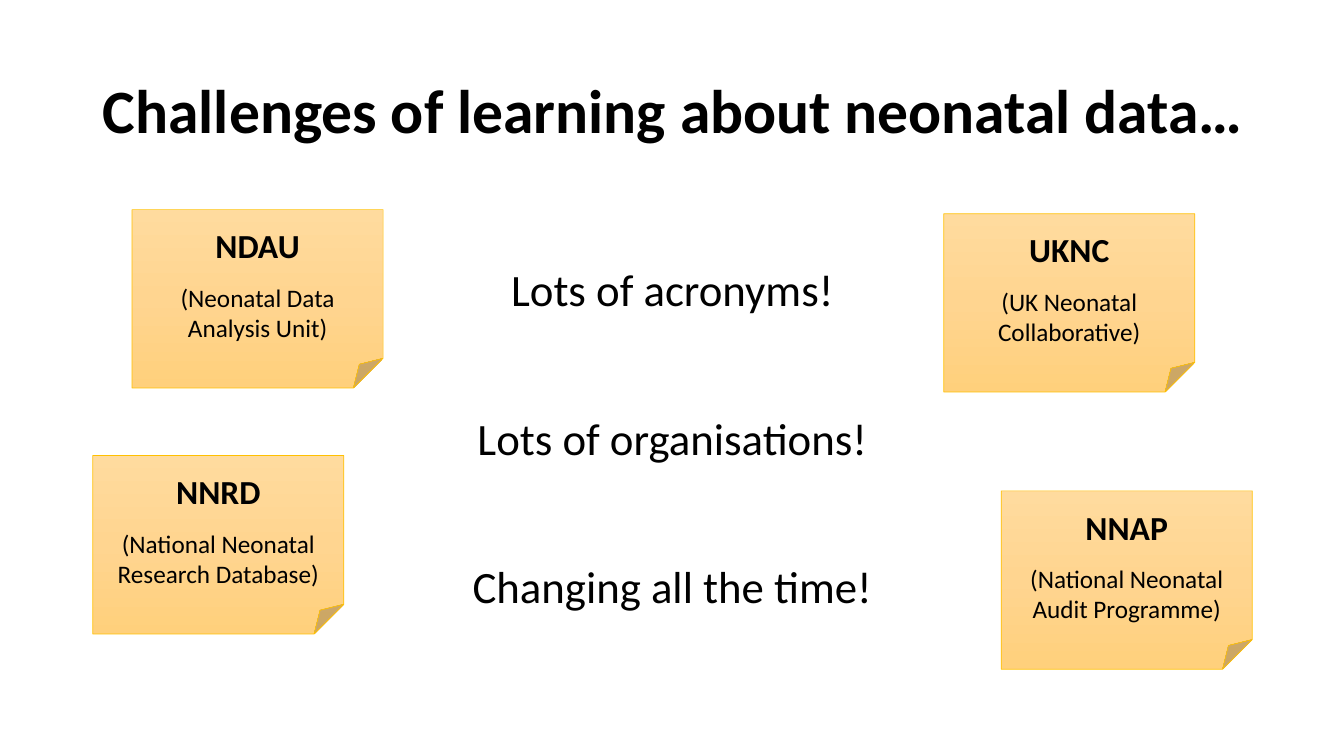
from copy import deepcopy
from dataclasses import dataclass
from typing import Optional

from pptx import Presentation
from pptx.dml.color import RGBColor
from pptx.enum.shapes import MSO_SHAPE
from pptx.enum.text import MSO_ANCHOR, MSO_AUTO_SIZE, PP_ALIGN
from pptx.oxml.ns import qn
from pptx.oxml.xmlchemy import OxmlElement
from pptx.util import Emu, Pt

FOLDED_CORNER = MSO_SHAPE.FOLDED_CORNER
LEFT, CENTER = PP_ALIGN.LEFT, PP_ALIGN.CENTER
TOP, MIDDLE = MSO_ANCHOR.TOP, MSO_ANCHOR.MIDDLE
NO_AUTOFIT = MSO_AUTO_SIZE.NONE

EMU_PER_PX = 9144  # 100 px to the inch
FONT = "Calibri"
BLACK = "000000"
NOTE_LINE = "FFC000"
NOTE_GRADIENT = ((0, "FFDB9E"), (0.5, "FFD590"), (1, "FFD07C"))
NOTE_WIDTH, NOTE_HEIGHT = 249, 177


@dataclass(frozen=True)
class StickyNote:
    left: int
    top: int
    acronym: str
    meaning: str


TITLE = "Challenges of learning about neonatal data…"
CHALLENGES = ("Lots of acronyms!", "Lots of organisations!", "Changing all the time!")
NOTES = (
    StickyNote(131, 208, "NDAU", "(Neonatal Data Analysis Unit)"),
    StickyNote(92, 452, "NNRD", "(National Neonatal Research Database)"),
    StickyNote(936, 212, "UKNC", "(UK Neonatal Collaborative)"),
    StickyNote(993, 487, "NNAP", "(National Neonatal Audit Programme)"),
)


def px(length: int) -> Emu:
    return Emu(length * EMU_PER_PX)


def color(value: str) -> RGBColor:
    return RGBColor.from_string(value)


def write(paragraph, text: str, *, size: int, bold: bool = False, align=CENTER,
          line_spacing: Optional[float] = None, before: int = 0, after: int = 0) -> None:
    """Fill a paragraph with one formatted run."""
    paragraph.alignment = align
    paragraph.line_spacing = line_spacing
    paragraph.space_before = Pt(before)
    paragraph.space_after = Pt(after)
    run = paragraph.add_run()
    run.text = text
    run.font.name = FONT
    run.font.size = Pt(size)
    run.font.bold = bold
    run.font.color.rgb = color(BLACK)


def place(shape, left: int, top: int, width: int, height: int, anchor):
    """Move a placeholder and return its text frame."""
    shape.left, shape.top = px(left), px(top)
    shape.width, shape.height = px(width), px(height)
    frame = shape.text_frame
    frame.auto_size = NO_AUTOFIT
    frame.word_wrap = True
    frame.vertical_anchor = anchor
    return frame


def remove_bullet(paragraph) -> None:
    properties = paragraph._p.get_or_add_pPr()
    properties.set("marL", "0")
    properties.set("indent", "0")
    properties.append(OxmlElement("a:buNone"))


def fill_gradient(shape) -> None:
    """Give a shape the three-stop note gradient, running downwards."""
    shape.fill.gradient()
    shape.fill.gradient_angle = 270
    stop_list = shape._element.spPr.find(qn("a:gradFill")).find(qn("a:gsLst"))
    stop_list.insert(1, deepcopy(stop_list[0]))
    for stop, (position, value) in zip(shape.fill.gradient_stops, NOTE_GRADIENT):
        stop.position = position
        stop.color.rgb = color(value)


def add_note(slide, note: StickyNote) -> None:
    shape = slide.shapes.add_shape(FOLDED_CORNER, px(note.left), px(note.top),
                                   px(NOTE_WIDTH), px(NOTE_HEIGHT))
    shape.shadow.inherit = False
    fill_gradient(shape)
    shape.line.color.rgb = color(NOTE_LINE)
    shape.line.width = Pt(0.5)
    frame = shape.text_frame
    frame.word_wrap = True
    frame.vertical_anchor = MIDDLE
    write(frame.paragraphs[0], note.acronym, size=24, bold=True, after=12)
    write(frame.add_paragraph(), note.meaning, size=18, after=6)


def main() -> None:
    presentation = Presentation()
    presentation.slide_width, presentation.slide_height = px(1333), px(750)
    slide = presentation.slides.add_slide(presentation.slide_layouts[1])

    # Title
    title_frame = place(slide.shapes.title, 92, 40, 1207, 145, MIDDLE)
    write(title_frame.paragraphs[0], TITLE, size=44, bold=True, align=LEFT,
          line_spacing=0.9)

    # Central list of challenges
    body_frame = place(slide.placeholders[1], 92, 175, 1150, 501, TOP)
    for index, challenge in enumerate(CHALLENGES):
        paragraph = body_frame.add_paragraph() if index else body_frame.paragraphs[0]
        write(paragraph, challenge, size=32, line_spacing=2.5, before=10)
        remove_bullet(paragraph)

    # Sticky notes explaining the acronyms
    for note in NOTES:
        add_note(slide, note)

    presentation.save("out.pptx")


if __name__ == "__main__":
    main()
